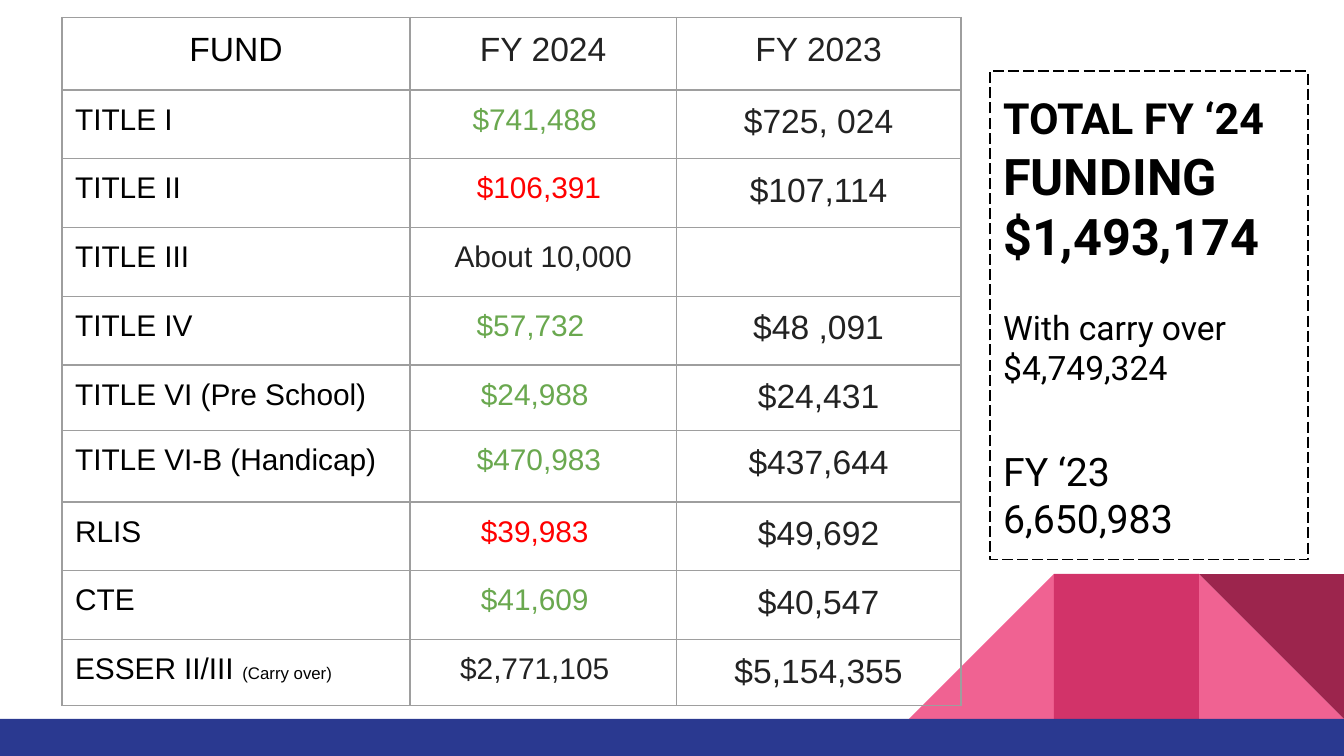
"""Build a slide comparing school fund allocations for FY 2024 and FY 2023."""
from lxml import etree
from pptx import Presentation
from pptx import oxml
from pptx.dml.color import RGBColor
from pptx.enum import dml, shapes, text
from pptx.oxml import ns
from pptx.util import Cm, Pt

BLACK, DARK, GREEN, RED = "000000", "222222", "6AA84F", "FF0000"
PINK, ROSE, WINE, NAVY, GREY = "F06292", "D23369", "9C254D", "2A3990", "9E9E9E"
INSET = 0.25
NUDGE = 0.16

COLUMN_WIDTHS = [6.58, 5.03, 5.38]
ROW_HEIGHTS = [1.37, 1.3, 1.3, 1.3, 1.3, 1.24, 1.35, 1.3, 1.3, 1.25]
HEADINGS = ["FUND", "FY 2024", "FY 2023"]
FUNDS = [
    ("TITLE I", "$741,488", GREEN, 2, "$725, 024"),
    ("TITLE II", "$106,391", RED, 1, "$107,114"),
    ("TITLE III", "About 10,000", DARK, 0, ""),
    ("TITLE IV", "$57,732", GREEN, 3, "$48 ,091"),
    ("TITLE VI (Pre School)", "$24,988", GREEN, 2, "$24,431"),
    ("TITLE VI-B (Handicap)", "$470,983", GREEN, 1, "$437,644"),
    ("RLIS", "$39,983", RED, 2, "$49,692"),
    ("CTE", "$41,609", GREEN, 2, "$40,547"),
    ("ESSER II/III ", "$2,771,105", DARK, 2, "$5,154,355"),
]
TOTALS = [
    ([("TOTAL FY ‘24", 23), (" FUNDING", 27)], True, 0),
    ([("$1,493,174", 27)], True, 0),
    ([("With carry over", 18)], False, 22),
    ([("$4,749,324", 18)], False, 0),
    ([("FY ‘23", 21)], False, 32),
    ([("6,650,983", 21)], False, 0),
]


def rgb(value):
    return RGBColor.from_string(value)


def add_text(paragraph, content, size=16, color=BLACK, font="Arial", bold=False):
    run = paragraph.add_run()
    run.text = content
    run.font.size = Pt(size)
    run.font.name = font
    run.font.bold = bold
    run.font.color.rgb = rgb(color)


def set_insets(holder, extra_right=0):
    holder.margin_left = holder.margin_top = holder.margin_bottom = Cm(INSET)
    holder.margin_right = Cm(INSET + extra_right)


def add_borders(cell, color, width):
    properties = cell._tc.get_or_add_tcPr()
    for side in ("lnL", "lnR", "lnT", "lnB"):
        line = etree.SubElement(properties, ns.qn(f"a:{side}"), w=str(Pt(width)))
        fill = etree.SubElement(line, ns.qn("a:solidFill"))
        etree.SubElement(fill, ns.qn("a:srgbClr"), val=color)


class SlideBuilder:
    """Hold the presentation style and the current slide."""

    def __init__(self, presentation):
        self.slide = presentation.slides.add_slide(presentation.slide_layouts[6])

    def block(self, kind, left, top, width, height, color=None, rotation=0):
        shape = self.slide.shapes.add_shape(
            kind, Cm(left), Cm(top), Cm(width), Cm(height))
        shape.shadow.inherit = False
        shape.rotation = rotation
        if color:
            shape.fill.solid()
            shape.fill.fore_color.rgb = rgb(color)
            shape.line.fill.background()
        else:
            shape.fill.background()
        return shape

    def decoration(self):
        triangle = shapes.MSO_SHAPE.RIGHT_TRIANGLE
        rectangle = shapes.MSO_SHAPE.RECTANGLE
        side, top, right = 2.74, 10.85, 25.4
        pieces = [(triangle, 1, PINK, 0), (triangle, 3, PINK, 270),
                  (rectangle, 2, ROSE, 0), (triangle, 1, WINE, 180)]
        for kind, steps, color, rotation in pieces:
            self.block(kind, right - steps * side, top, side, side, color, rotation)
        self.block(rectangle, 0, top + side, right, 0.7, NAVY)

    def cell(self, cell, content, centered=True, extra_right=0, **style):
        set_insets(cell, extra_right)
        add_borders(cell, GREY, 0.75)
        cell.fill.background()
        paragraph = cell.text_frame.paragraphs[0]
        paragraph.alignment = text.PP_ALIGN.CENTER if centered else text.PP_ALIGN.LEFT
        if content:
            add_text(paragraph, content, **style)
        return paragraph

    def fund_table(self, left, top):
        frame = self.slide.shapes.add_table(
            len(ROW_HEIGHTS), len(COLUMN_WIDTHS), Cm(left), Cm(top),
            Cm(sum(COLUMN_WIDTHS)), Cm(sum(ROW_HEIGHTS)))
        table = frame.table
        table.first_row = table.horz_banding = False
        for column, width in zip(table.columns, COLUMN_WIDTHS):
            column.width = Cm(width)
        for row, height in zip(table.rows, ROW_HEIGHTS):
            row.height = Cm(height)
        for index, heading in enumerate(HEADINGS):
            self.cell(table.cell(0, index), heading, size=18,
                      color=DARK if index else BLACK)
        for row, (fund, current, color, nudges, previous) in enumerate(FUNDS, 1):
            label = self.cell(table.cell(row, 0), fund, centered=False)
            self.cell(table.cell(row, 1), current, color=color,
                      extra_right=nudges * NUDGE)
            self.cell(table.cell(row, 2), previous, size=18, color=DARK)
        add_text(label, "(Carry over)", size=9)

    def totals_panel(self, left, top, width, height):
        panel = self.block(shapes.MSO_SHAPE.RECTANGLE, left, top, width, height)
        panel.line.color.rgb = rgb(BLACK)
        panel.line.width = Pt(0.75)
        panel.line.dash_style = dml.MSO_LINE.LONG_DASH
        frame = panel.text_frame
        frame.word_wrap = True
        frame.vertical_anchor = text.MSO_ANCHOR.TOP
        set_insets(frame)
        for index, (runs, bold, gap) in enumerate(TOTALS):
            paragraph = frame.add_paragraph() if index else frame.paragraphs[0]
            paragraph.alignment = text.PP_ALIGN.LEFT
            paragraph.space_before = Pt(gap)
            for content, size in runs:
                add_text(paragraph, content, size=size, font="Roboto", bold=bold)


def main():
    presentation = Presentation()
    presentation.slide_width = Cm(25.4)
    presentation.slide_height = Cm(14.29)
    builder = SlideBuilder(presentation)
    builder.decoration()
    builder.fund_table(1.17, 0.33)
    builder.totals_panel(18.71, 1.34, 6.01, 9.24)
    presentation.save("out.pptx")


if __name__ == "__main__":
    main()
